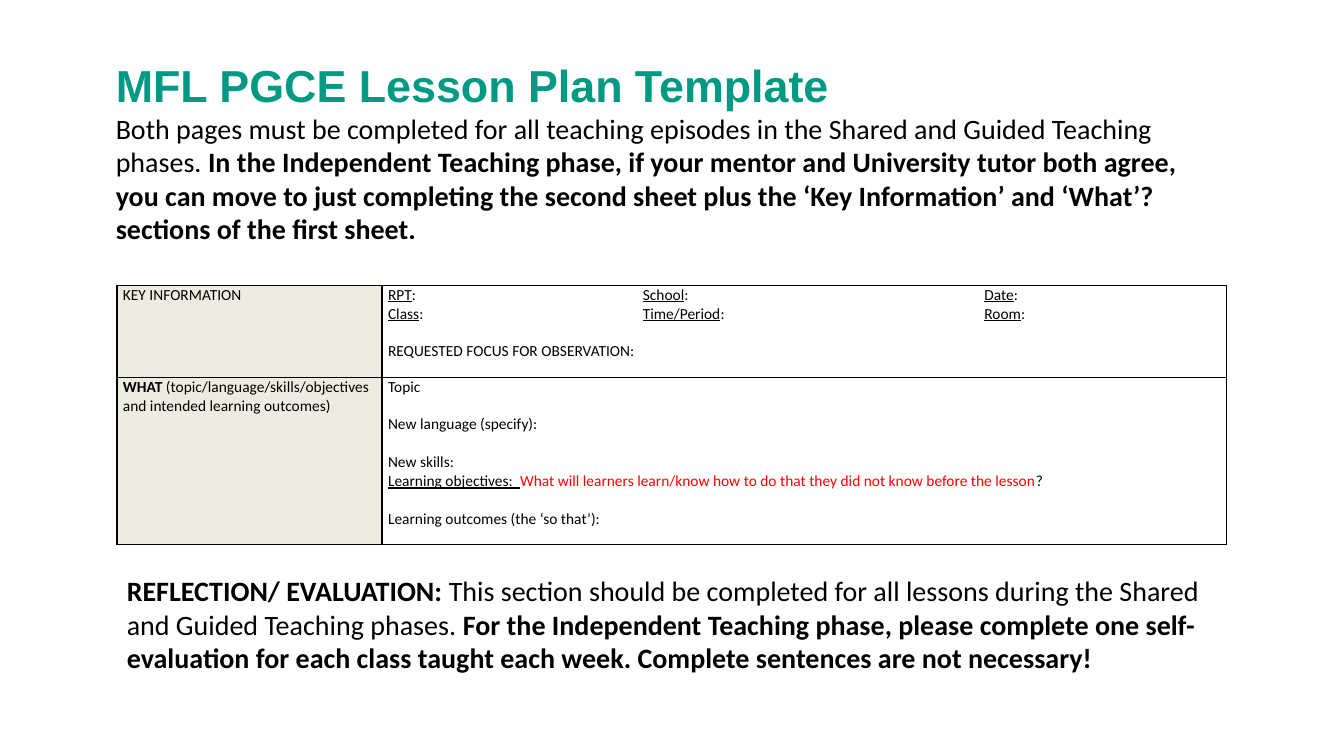
from lxml.etree import SubElement
from pptx import Presentation
from pptx.dml.color import RGBColor
from pptx.oxml.ns import qn
from pptx.util import Pt

BLACK = RGBColor(0x00, 0x00, 0x00)
RED = RGBColor(0xFF, 0x00, 0x00)
TEAL = RGBColor(0x00, 0x9A, 0x84)
CREAM = RGBColor(0xEE, 0xEC, 0xE1)
LINE = 13.4  # one blank line of table text
TABS = (182, 426)


def add_run(p, text, size=11, font="Calibri", color=BLACK, bold=False, underline=False):
    r = p.add_run()
    r.text = text
    f = r.font
    f.size, f.name, f.bold, f.underline = Pt(size), font, bold, underline
    f.color.rgb = color


def add_tabs(p):
    tabs = SubElement(p._p.get_or_add_pPr(), qn("a:tabLst"))
    for pos in TABS:
        SubElement(tabs, qn("a:tab"), pos=str(Pt(pos)), algn="l")


def add_border(cell):
    tcPr = cell._tc.get_or_add_tcPr()
    for side in ("lnL", "lnR", "lnT", "lnB"):
        ln = SubElement(tcPr, qn(f"a:{side}"), w=str(Pt(1)))
        fill = SubElement(ln, qn("a:solidFill"))
        SubElement(fill, qn("a:srgbClr"), val=str(BLACK))


def add_text_box(s, x, y, w, h):
    tf = s.shapes.add_textbox(Pt(x), Pt(y), Pt(w), Pt(h)).text_frame
    tf.word_wrap = True
    return tf


def add_introduction(s, x, y, w, h):
    tf = add_text_box(s, x, y, w, h)
    add_run(tf.paragraphs[0], "MFL PGCE Lesson Plan Template",
            size=32, font="Arial", color=TEAL, bold=True)
    p = tf.add_paragraph()
    add_run(p, "Both pages must be completed for all teaching episodes in the Shared "
            "and Guided Teaching phases. ", size=20)
    add_run(p, "In the Independent Teaching phase, if your mentor and University tutor "
            "both agree, you can move to just completing the second sheet plus the "
            "‘Key Information’ and ‘What’? sections of the first sheet.", size=20, bold=True)


def fill_key_information(tf):
    lines = (("RPT", "School", "Date"), ("Class", "Time/Period", "Room"))
    for i, labels in enumerate(lines):
        p = tf.add_paragraph() if i else tf.paragraphs[0]
        add_tabs(p)
        for j, label in enumerate(labels):
            add_run(p, label, underline=True)
            add_run(p, ":\t" if j < len(labels) - 1 else ":")
    p = tf.add_paragraph()
    p.space_before = Pt(LINE)
    add_run(p, "REQUESTED FOCUS FOR OBSERVATION:")


def fill_what(tf):
    add_run(tf.paragraphs[0], "Topic")
    for text in ("New language (specify):", "New skills:"):
        p = tf.add_paragraph()
        p.space_before = Pt(LINE)
        add_run(p, text)
    p = tf.add_paragraph()
    add_run(p, "Learning objectives:  ", underline=True)
    add_run(p, "What will learners learn/know how to do that they did not know "
            "before the lesson", color=RED)
    add_run(p, "?")
    p = tf.add_paragraph()
    p.space_before = Pt(LINE)
    add_run(p, "Learning outcomes (the ‘so that’):")


def add_plan_table(s, x, y, w, h):
    table = s.shapes.add_table(2, 2, Pt(x), Pt(y), Pt(w), Pt(h)).table
    table.first_row = table.horz_banding = False
    label_w, key_h = 189.4, 65.7
    table.columns[0].width, table.columns[1].width = Pt(label_w), Pt(w - label_w)
    table.rows[0].height, table.rows[1].height = Pt(key_h), Pt(h - key_h)
    for cell in table.iter_cells():
        cell.margin_left = cell.margin_right = Pt(4.3)
        cell.margin_top = cell.margin_bottom = 0
        add_border(cell)
    for row in range(2):
        label, content = table.cell(row, 0), table.cell(row, 1)
        label.fill.solid()
        label.fill.fore_color.rgb = CREAM
        content.fill.background()

    # Row labels
    add_run(table.cell(0, 0).text_frame.paragraphs[0], "KEY INFORMATION")
    p = table.cell(1, 0).text_frame.paragraphs[0]
    add_run(p, "WHAT ", bold=True)
    add_run(p, "(topic/language/skills/objectives and intended learning outcomes)")

    # Fields to complete
    fill_key_information(table.cell(0, 1).text_frame)
    fill_what(table.cell(1, 1).text_frame)


def add_reflection(s, x, y, w, h):
    p = add_text_box(s, x, y, w, h).paragraphs[0]
    add_run(p, "REFLECTION/ EVALUATION: ", size=20, bold=True)
    add_run(p, "This section should be completed for all lessons during the Shared "
            "and Guided Teaching phases.", size=20)
    add_run(p, " For the Independent Teaching phase, please complete one "
            "self-evaluation for each class taught each week. Complete sentences "
            "are not necessary!", size=20, bold=True)


def main():
    prs = Presentation()
    prs.slide_width, prs.slide_height = Pt(960), Pt(540)
    s = prs.slides.add_slide(prs.slide_layouts[6])
    add_introduction(s, 75.6, 37.4, 800.6, 143.3)
    add_plan_table(s, 83.5, 203.8, 792.4, 185)
    add_reflection(s, 83.5, 406.1, 797, 79.9)
    prs.save("out.pptx")


if __name__ == "__main__":
    main()
